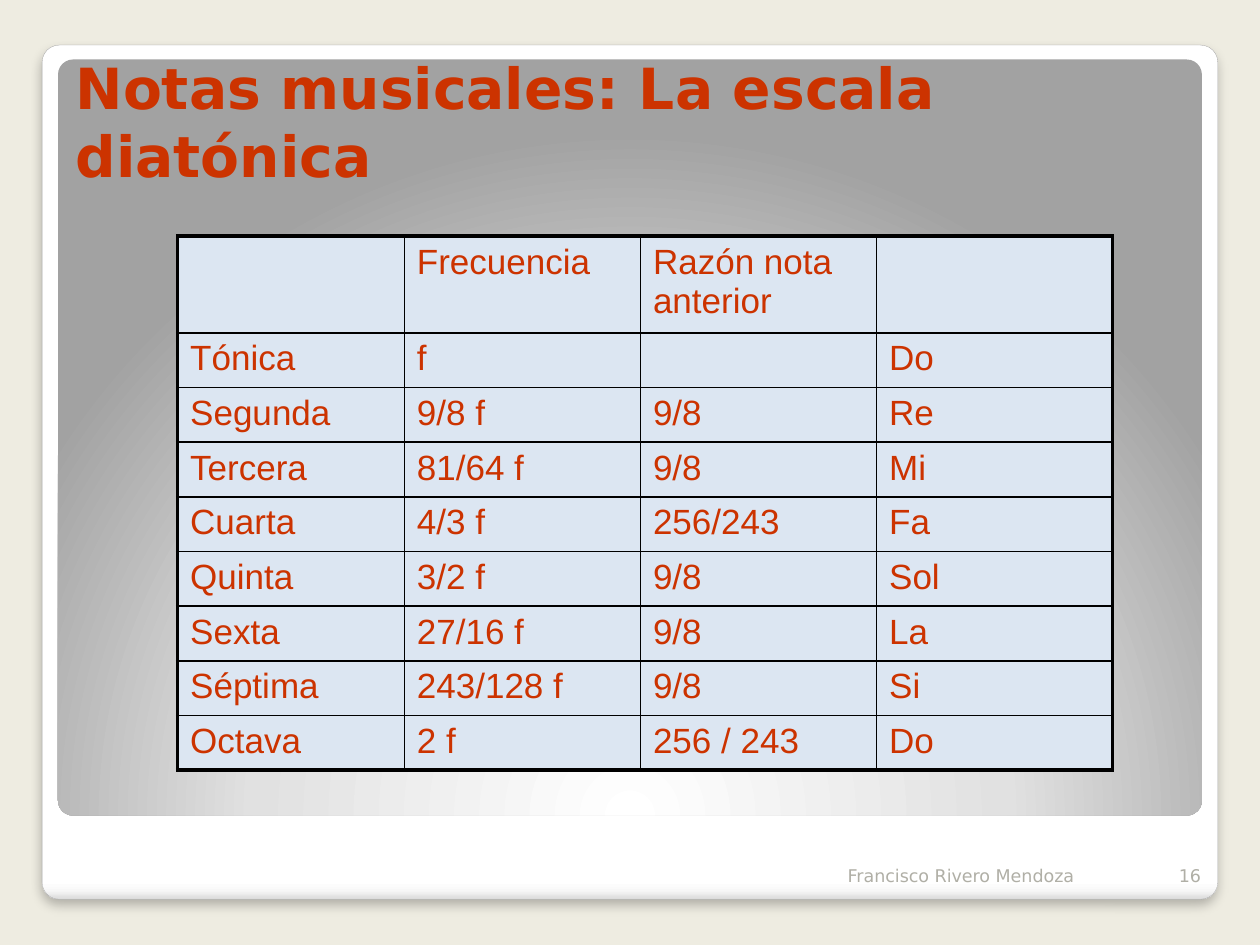
from lxml import etree
from pptx import Presentation
from pptx import util as u
from pptx.dml.color import RGBColor
from pptx.enum import shapes, text
from pptx.oxml import parse_xml
from pptx.oxml.ns import nsdecls, qn

BACKGROUND = RGBColor(0xEE, 0xEC, 0xE1)
RED = RGBColor(0xCC, 0x33, 0x00)
FOOTER_GREY = RGBColor(0xB0, 0xAF, 0xA6)
EDGE_GREY = RGBColor(0xA4, 0xA4, 0xA4)
CELL_BLUE = RGBColor(0xDC, 0xE6, 0xF2)
BLACK = RGBColor(0, 0, 0)
CARD_STOPS = [(0, "FFFFFF"), (98, "FFFFFF"), (99, "F7F7F7"), (100, "DADADA")]
PANEL_STOPS = [(0, "FFFFFF"), (55, "E1E1E1"), (100, "A2A2A2")]
LINEAR = '<a:lin ang="5400000" scaled="0"/>'
RADIAL = ('<a:path path="circle"><a:fillToRect l="50000" t="175000" '
          'r="50000" b="-75000"/></a:path>')

ROWS = [
    ("", "Frecuencia", "Razón nota anterior", ""),
    ("Tónica", "f", "", "Do"),
    ("Segunda", "9/8 f", "9/8", "Re"),
    ("Tercera", "81/64 f", "9/8", "Mi"),
    ("Cuarta", "4/3 f", "256/243", "Fa"),
    ("Quinta", "3/2 f", "9/8", "Sol"),
    ("Sexta", "27/16 f", "9/8", "La"),
    ("Séptima", "243/128 f", "9/8", "Si"),
    ("Octava", "2 f", "256 / 243", "Do"),
]


def write(frame, words, size, color, font="DejaVu Sans", bold=False,
          align=text.PP_ALIGN.LEFT):
    paragraph = frame.paragraphs[0]
    paragraph.alignment = align
    run = paragraph.add_run()
    run.text = words
    run.font.name = font
    run.font.size = u.Pt(size)
    run.font.bold = bold
    run.font.color.rgb = color


def place(shape, box):
    shape.left, shape.top, shape.width, shape.height = map(u.Cm, box)


def add_rounded(slide, box, stops, direction):
    """Add a round rectangle without outline, filled with a gradient."""
    shape = slide.shapes.add_shape(
        shapes.MSO_SHAPE.ROUNDED_RECTANGLE, *map(u.Cm, box))
    shape.adjustments[0] = 0.02
    shape.line.fill.background()
    shape.shadow.inherit = False
    shape.fill.background()
    stop_xml = "".join(
        f'<a:gs pos="{position * 1000}"><a:srgbClr val="{color}"/></a:gs>'
        for position, color in stops)
    properties = shape._element.spPr
    properties.replace(properties.find(qn("a:noFill")), parse_xml(
        f'<a:gradFill {nsdecls("a")} rotWithShape="1">'
        f'<a:gsLst>{stop_xml}</a:gsLst>{direction}</a:gradFill>'))
    return shape


def add_frame(slide, box):
    """Add the white card with its shadow and the grey panel on it."""
    left, top, width, height = box
    card = add_rounded(slide, box, CARD_STOPS, LINEAR)
    card.line.color.rgb = EDGE_GREY
    card.line.width = u.Pt(0.16)
    card._element.spPr.find(qn("a:effectLst")).append(parse_xml(
        f'<a:outerShdw {nsdecls("a")} blurRad="{u.Pt(6)}" dist="{u.Pt(4)}" '
        'dir="5400000" algn="tl" rotWithShape="0"><a:srgbClr val="000000">'
        '<a:alpha val="25000"/></a:srgbClr></a:outerShdw>'))
    margin = 0.32
    add_rounded(slide, (left + margin, top + 0.29, width - 2 * margin,
                        height - 1.98), PANEL_STOPS, RADIAL)


def add_title(slide, box, words):
    title = slide.shapes.title
    slide.shapes._spTree.append(title._element)  # in front of the frame
    place(title, box)
    frame = title.text_frame
    frame.word_wrap = True
    frame.auto_size = text.MSO_AUTO_SIZE.NONE
    frame.vertical_anchor = text.MSO_ANCHOR.BOTTOM
    write(frame, words, 32.4, RED, bold=True)


def add_footer(slide, box, author, number):
    left, top, width, height = box
    number_width = 1.27
    author_width = width - number_width
    for words, x, part_width, align in (
            (author, left, author_width, text.PP_ALIGN.LEFT),
            (number, left + author_width, number_width, text.PP_ALIGN.RIGHT)):
        label = slide.shapes.add_textbox(
            *map(u.Cm, (x, top, part_width, height)))
        label.text_frame.word_wrap = True
        label.text_frame.vertical_anchor = text.MSO_ANCHOR.BOTTOM
        write(label.text_frame, words, 10, FOOTER_GREY, align=align)


def set_borders(cell, widths):
    """Draw the borders of a cell; widths maps L, R, T and B to points."""
    properties = cell._tc.get_or_add_tcPr()
    for side in "LRTB":
        line = etree.SubElement(properties, qn(f"a:ln{side}"),
                                w=str(u.Pt(widths[side])))
        fill = etree.SubElement(line, qn("a:solidFill"))
        etree.SubElement(fill, qn("a:srgbClr"), val=str(BLACK))


def add_scale_table(slide, box, rows):
    """Add the table: a narrower first column and a taller first row."""
    width, height = box[2:]
    first_width, first_height = 4.57, 1.83
    last_row, last_column = len(rows) - 1, len(rows[0]) - 1
    table = slide.shapes.add_table(
        len(rows), len(rows[0]), *map(u.Cm, box)).table
    for i, column in enumerate(table.columns):
        column.width = u.Cm((width - first_width) / last_column
                            if i else first_width)
    for i, row in enumerate(table.rows):
        row.height = u.Cm((height - first_height) / last_row
                          if i else first_height)
    thin, thick = 1, 2.25
    for i, row in enumerate(rows):
        for j, words in enumerate(row):
            cell = table.cell(i, j)
            set_borders(cell, {
                "L": thin if j else thick,
                "R": thick if j == last_column else thin,
                "T": thin if i else thick,
                "B": thick if i == last_row else thin})
            cell.fill.solid()
            cell.fill.fore_color.rgb = CELL_BLUE
            if words:
                write(cell.text_frame, words, 20, RED, font="Arial")


def main():
    presentation = Presentation()
    presentation.slide_width = u.Cm(25.4)
    presentation.slide_height = u.Cm(19.05)
    slide = presentation.slides.add_slide(presentation.slide_layouts[5])
    slide.background.fill.solid()
    slide.background.fill.fore_color.rgb = BACKGROUND
    add_frame(slide, (0.85, 0.91, 23.7, 17.22))
    add_title(slide, (1.27, 0.76, 22.86, 3.18),
              "Notas musicales: La escala diatónica")
    add_footer(slide, (16.84, 16.97, 7.62, 1.02),
               "Francisco Rivero Mendoza", "16")
    add_scale_table(slide, (3.58, 4.76, 18.85, 10.17), ROWS)
    presentation.save("out.pptx")


if __name__ == "__main__":
    main()
